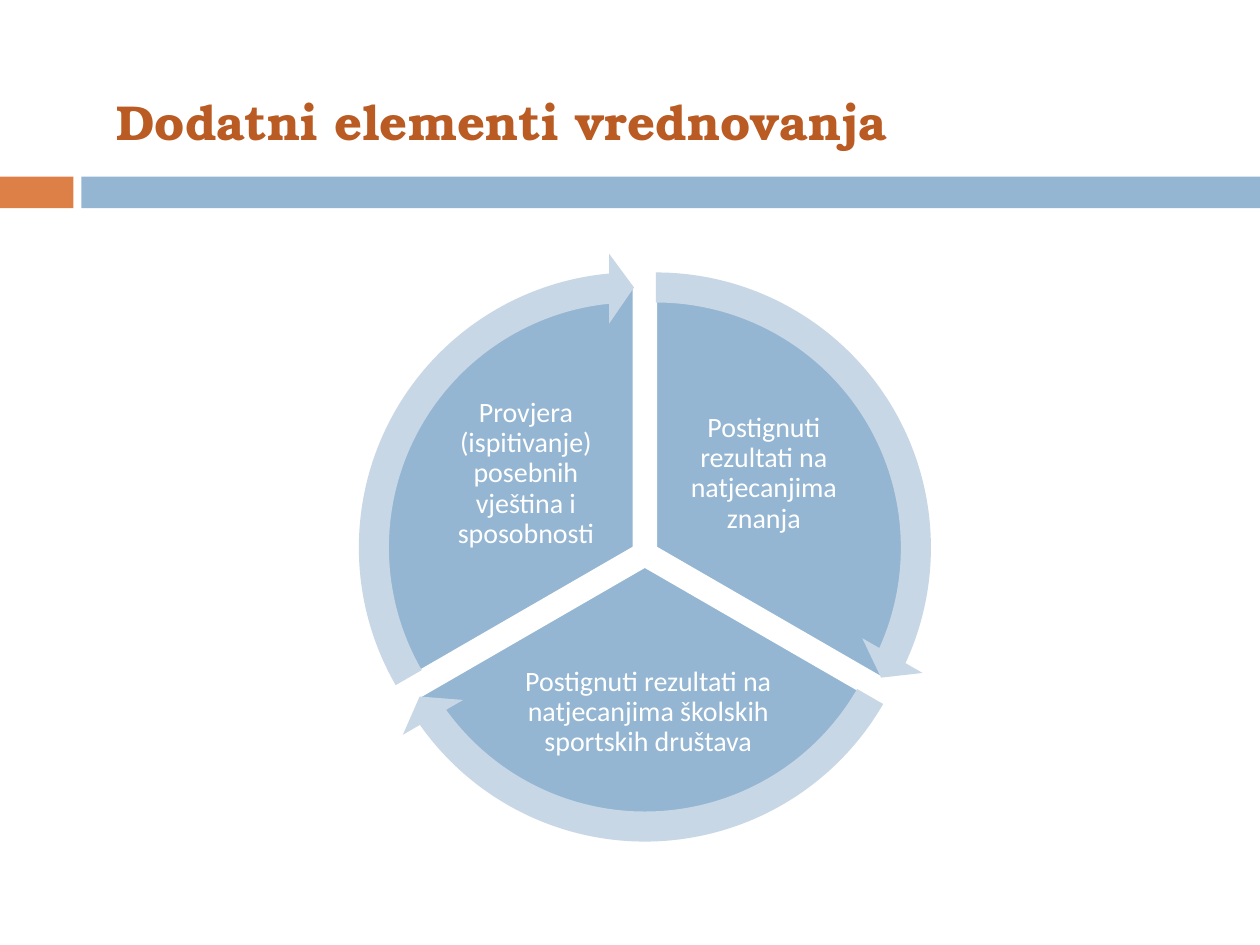
from dataclasses import dataclass
from math import cos, radians, sin

from pptx import Presentation
from pptx.dml.color import RGBColor
from pptx.enum.shapes import MSO_SHAPE as Preset
from pptx.enum.text import MSO_ANCHOR as Anchor, MSO_AUTO_SIZE as AutoSize, PP_ALIGN as Align
from pptx.util import Pt


@dataclass(frozen=True)
class Theme:
    """Colours, fonts and type sizes of the slide."""
    orange: str = "DD8047"
    blue: str = "94B6D2"
    pale_blue: str = "C8D7E5"
    rust: str = "B95B22"
    white: str = "FFFFFF"
    title_font: str = "TeX Gyre Bonum"
    body_font: str = "Calibri"
    title_size: float = 28
    body_size: float = 16


THEME = Theme()
DEGREE = 0.6
SECTORS = [
    ("Postignuti rezultati na natjecanjima znanja", 270, (68, -45.7, 107, 89.3)),
    ("Postignuti rezultati na natjecanjima školskih sportskih društava", 30, (2, 90.7, 160.5, 78.5)),
    ("Provjera (ispitivanje) posebnih vještina i sposobnosti", 150, (-68, -45.7, 107, 89.3)),
]


def set_attributes(target, values):
    """Set every named value on the target."""
    for name, value in values.items():
        setattr(target, name, value)


def centred_box(x, y, width, height):
    """Return the box of the given size around a centre."""
    return x - width / 2, y - height / 2, width, height


def add_filled(slide, preset, box, color, adjustments=(), outline=None):
    """Add a flat preset shape with an optional outline."""
    shape = slide.shapes.add_shape(preset, *map(Pt, box))
    shape.shadow.inherit = False
    shape.fill.solid()
    shape.fill.fore_color.rgb = RGBColor.from_string(color)
    for index, value in enumerate(adjustments):
        shape.adjustments[index] = value
    if outline:
        shape.line.color.rgb = RGBColor.from_string(outline)
        shape.line.width = Pt(1.5)
    else:
        shape.line.fill.background()


def add_text(slide, box, text, color, font, frame=None, paragraph=None):
    """Add a wrapped one-paragraph text box."""
    text_frame = slide.shapes.add_textbox(*map(Pt, box)).text_frame
    set_attributes(text_frame, {"word_wrap": True, **(frame or {})})
    line = text_frame.paragraphs[0]
    set_attributes(line, paragraph or {})
    run = line.add_run()
    run.text = text
    set_attributes(run.font, font)
    run.font.color.rgb = RGBColor.from_string(color)


def add_header(slide, box):
    """Place the title over a band with an orange start."""
    left, top, width, height = box
    band_height, accent_width, band_start = 18, 42, 46.5
    band_top = top + height - band_height
    add_filled(slide, Preset.RECTANGLE, (left, band_top, accent_width, band_height), THEME.orange)
    add_filled(slide, Preset.RECTANGLE,
               (left + band_start, band_top, width - band_start, band_height), THEME.blue)
    add_text(slide, (left + 59.5, top + 49, 533, 41), "Dodatni elementi vrednovanja", THEME.rust,
             {"name": THEME.title_font, "size": Pt(THEME.title_size), "bold": True},
             {"auto_size": AutoSize.SHAPE_TO_FIT_TEXT})


def add_wheel(slide, box):
    """Place three exploded sectors, their labels and the arrows around them."""
    left, top, width, height = box
    x, y = left + width / 2, top + height / 2
    pie_size, arrow_size, gap, sweep = 300, 337, 7.2, 120
    head_angle = 3.275
    margins = dict.fromkeys(("margin_left", "margin_top", "margin_right", "margin_bottom"), Pt(1.5))
    centres = []
    for text, start, (label_x, label_y, label_width, label_height) in SECTORS:
        middle = radians(start + sweep / 2)
        centre = x + gap * cos(middle), y + gap * sin(middle)
        end = (start + sweep) % 360
        centres.append((centre, start, end))
        add_filled(slide, Preset.PIE, centred_box(*centre, pie_size, pie_size), THEME.blue,
                   (start * DEGREE, end * DEGREE), THEME.white)
        add_text(slide, centred_box(x + label_x, y + label_y, label_width, label_height), text,
                 THEME.white, {"name": THEME.body_font, "size": Pt(THEME.body_size)},
                 {"vertical_anchor": Anchor.MIDDLE, **margins},
                 {"alignment": Align.CENTER, "line_spacing": 0.9})
    for centre, start, end in centres:
        add_filled(slide, Preset.CIRCULAR_ARROW, centred_box(*centre, arrow_size, arrow_size),
                   THEME.pale_blue,
                   (0.051, head_angle, end * DEGREE - head_angle, start * DEGREE, 0.059))


def main():
    """Build and save the presentation."""
    presentation = Presentation()
    set_attributes(presentation, {"slide_width": Pt(720), "slide_height": Pt(540)})
    slide = presentation.slides.add_slide(presentation.slide_layouts[6])
    add_header(slide, (0, 0, 720, 119))
    add_wheel(slide, (193.5, 141.5, 350, 350))
    presentation.save("out.pptx")


if __name__ == "__main__":
    main()
